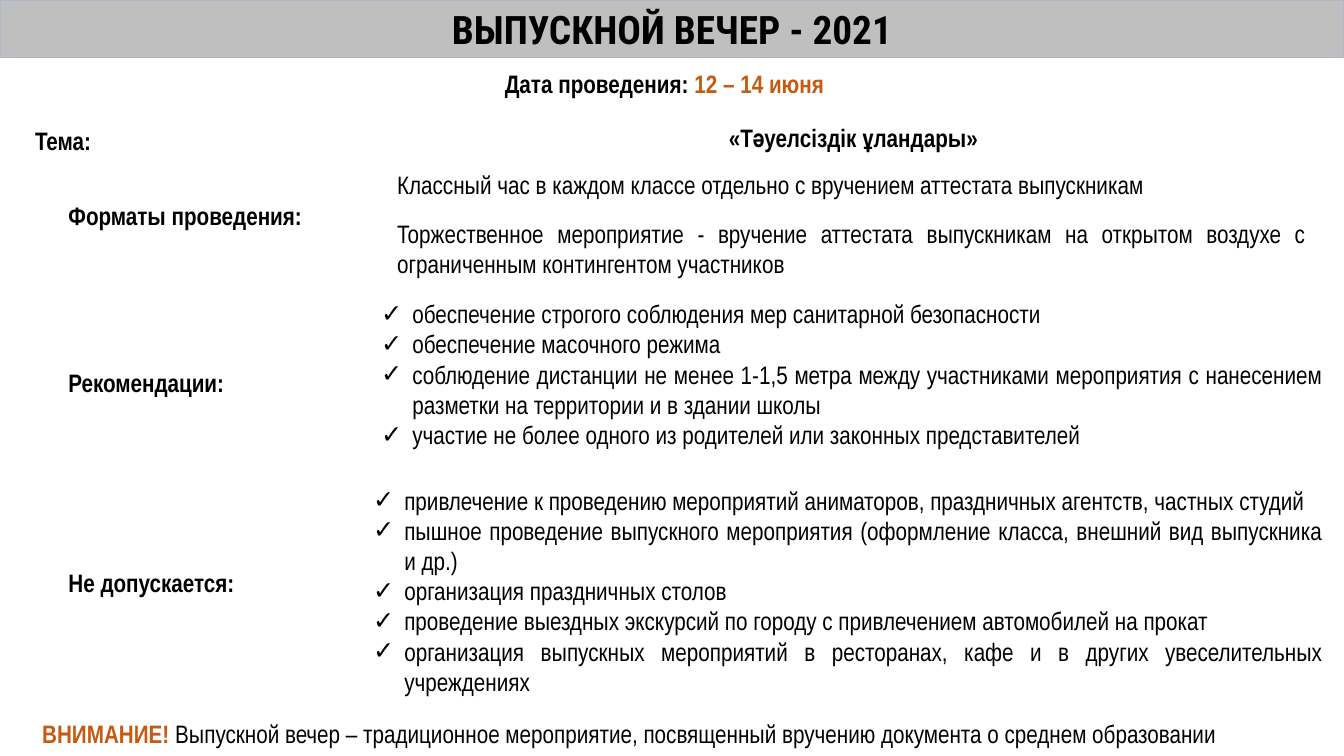
"""Build the slide on the 2021 school leavers' evening."""
import dataclasses
import typing

import lxml.etree
import pptx
import pptx.dml.color
import pptx.enum.shapes
import pptx.enum.text
import pptx.oxml.ns
import pptx.util

SCALE = 9144
ALIGN = pptx.enum.text.PP_ALIGN


@dataclasses.dataclass(frozen=True)
class Theme:
    ink: str = "000000"
    accent: str = "C55A11"
    band: str = "BFBFBF"
    rim: str = "ADB9CA"
    paper: str = "FFFFFF"
    font: str = "Arial Narrow"
    head: str = "Roboto Condensed"
    size: int = 18
    large: int = 28
    edge: float = 0.75


THEME = Theme()


class Run(typing.NamedTuple):
    text: str
    bold: bool = False
    color: str = THEME.ink
    font: str = THEME.font
    size: int = THEME.size


class Box(typing.NamedTuple):
    left: int
    top: int
    width: int
    height: int
    lines: list[list[Run]]
    align: ALIGN = ALIGN.LEFT
    fill: str | None = None
    edge: str | None = THEME.paper
    mark: str | None = None


def px(count: int) -> pptx.util.Emu:
    return pptx.util.Emu(count * SCALE)


def rgb(code: str) -> pptx.dml.color.RGBColor:
    return pptx.dml.color.RGBColor.from_string(code)


def label(top: int, text: str, left: int = 58) -> Box:
    return Box(left, top, 311, 40, [[Run(text, True)]])


def checks(left: int, top: int, width: int, height: int, items: list[str]) -> Box:
    lines = [[Run(item)] for item in items]
    return Box(left, top, width, height, lines, ALIGN.JUSTIFY, mark="✓")


def set_mark(para, mark: str) -> None:
    props = para._p.get_or_add_pPr()
    props.set("marL", str(px(31)))
    props.set("indent", str(-px(31)))
    node = lxml.etree.SubElement(props, pptx.oxml.ns.qn("a:buChar"))
    node.set("char", mark)


def add_run(para, run: Run) -> None:
    part = para.add_run()
    part.text = run.text
    part.font.name = run.font
    part.font.size = pptx.util.Pt(run.size)
    part.font.bold = run.bold
    part.font.color.rgb = rgb(run.color)


def dress(shape, box: Box) -> None:
    shape.left, shape.top = px(box.left), px(box.top)
    shape.width, shape.height = px(box.width), px(box.height)
    if box.fill:
        shape.fill.solid()
        shape.fill.fore_color.rgb = rgb(box.fill)
    else:
        shape.fill.background()
    if box.edge:
        shape.line.color.rgb = rgb(box.edge)
        shape.line.width = pptx.util.Pt(THEME.edge)
    else:
        shape.line.fill.background()
    frame = shape.text_frame
    frame.word_wrap = True
    frame.auto_size = pptx.enum.text.MSO_AUTO_SIZE.NONE
    frame.vertical_anchor = pptx.enum.text.MSO_ANCHOR.MIDDLE
    for spot, line in enumerate(box.lines):
        para = frame.add_paragraph() if spot else frame.paragraphs[0]
        para.alignment = box.align
        para.space_before = pptx.util.Pt(0)
        if box.mark:
            set_mark(para, box.mark)
        for run in line:
            add_run(para, run)


def add_box(slide, box: Box) -> None:
    kind = pptx.enum.shapes.MSO_SHAPE.RECTANGLE
    shape = slide.shapes.add_shape(
        kind, px(box.left), px(box.top), px(box.width), px(box.height))
    shape.shadow.inherit = False
    dress(shape, box)


TITLE = Box(
    0, 0, 1333, 57,
    [[Run("ВЫПУСКНОЙ ВЕЧЕР - 2021", True, font=THEME.head, size=THEME.large)]],
    ALIGN.CENTER, THEME.band, THEME.rim)

LISTS = [
    checks(368, 290, 954, 162, [
        "обеспечение строгого соблюдения мер санитарной безопасности",
        "обеспечение масочного режима",
        "соблюдение дистанции не менее 1-1,5 метра между участниками мероприятия "
        "с нанесением разметки на территории и в здании школы",
        "участие не более одного из родителей или законных представителей",
    ]),
    checks(360, 475, 962, 222, [
        "привлечение к проведению мероприятий аниматоров, праздничных агентств, "
        "частных студий",
        "пышное проведение выпускного мероприятия (оформление класса, "
        "внешний вид выпускника и др.)",
        "организация праздничных столов",
        "проведение выездных экскурсий по городу с привлечением автомобилей на прокат",
        "организация выпускных мероприятий в ресторанах, кафе и в других "
        "увеселительных учреждениях",
    ]),
]

BOXES = [
    Box(386, 63, 546, 40,
        [[Run("Дата проведения: ", True), Run("12 – 14 июня", True, THEME.accent)]],
        ALIGN.CENTER),
    label(119, "Тема:", 25),
    label(194, "Форматы проведения:"),
    label(359, "Рекомендации:"),
    label(558, "Не допускается:"),
    Box(385, 116, 923, 40, [[Run("«Тәуелсіздік ұландары»", True)]], ALIGN.CENTER),
    Box(384, 163, 921, 40, [[Run(
        "Классный час в каждом классе отдельно с вручением аттестата выпускникам")]]),
    Box(384, 211, 921, 71, [[Run(
        "Торжественное мероприятие - вручение аттестата выпускникам на открытом "
        "воздухе с ограниченным контингентом участников")]], ALIGN.JUSTIFY),
    Box(32, 708, 1275, 40, [[
        Run("ВНИМАНИЕ! ", True, THEME.accent),
        Run("Выпускной вечер – традиционное мероприятие, посвященный вручению "
            "документа о среднем образовании")]], ALIGN.JUSTIFY, edge=None),
]


def main() -> None:
    deck = pptx.Presentation()
    deck.slide_width, deck.slide_height = px(1333), px(750)
    slide = deck.slides.add_slide(deck.slide_layouts[3])
    for holder, box in zip(slide.placeholders, [TITLE, *LISTS]):
        dress(holder, box)
    for box in BOXES:
        add_box(slide, box)
    deck.save("out.pptx")


if __name__ == "__main__":
    main()
